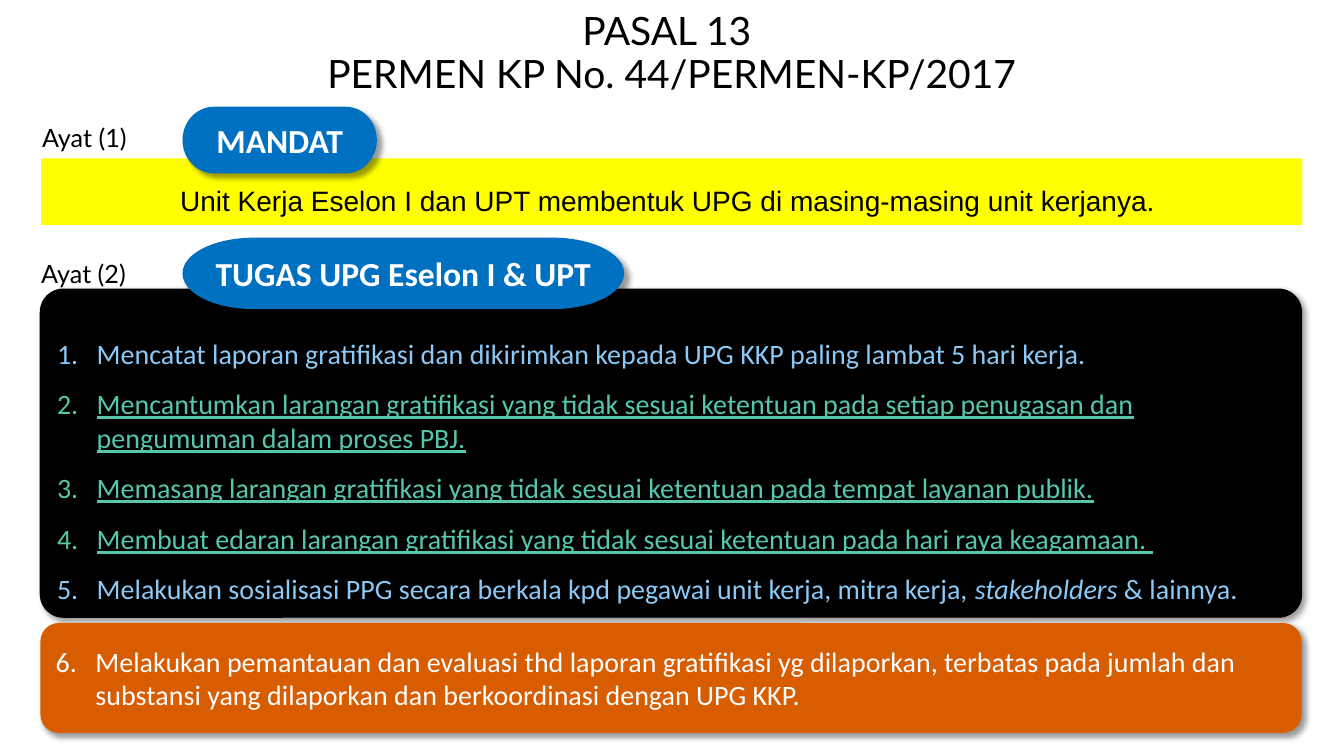
from dataclasses import dataclass
from lxml.etree import SubElement
from pptx import Presentation
from pptx.dml.color import RGBColor
from pptx.enum.shapes import MSO_SHAPE
from pptx.enum.text import MSO_ANCHOR, MSO_AUTO_SIZE, PP_ALIGN
from pptx.oxml.ns import qn
from pptx.util import Cm, Pt


@dataclass(frozen=True)
class Theme:
    black: str = "000000"
    white: str = "FFFFFF"
    yellow: str = "FFFF00"
    blue: str = "0070C0"
    orange: str = "D85C00"
    sky: str = "8CC9F7"
    mint: str = "56C7AA"
    title_size: float = 27.9
    badge_size: int = 24
    body_size: int = 20
    label_size: int = 18


theme = Theme()


def add_panel(kind, left, top, width, height, fill, shadow_distance=0):
    shape = slide.shapes.add_shape(kind, Cm(left), Cm(top), Cm(width), Cm(height))
    shape.shadow.inherit = False
    shape.fill.solid()
    shape.fill.fore_color.rgb = RGBColor.from_string(fill)
    shape.line.fill.background()
    shape.text_frame.word_wrap = True
    shape.text_frame.vertical_anchor = MSO_ANCHOR.MIDDLE
    if shadow_distance:
        effects = shape._element.spPr.find(qn("a:effectLst"))
        shadow = SubElement(effects, qn("a:outerShdw"), blurRad=str(Pt(4)),
                            dist=str(Pt(shadow_distance)), dir="2700000",
                            algn="tl", rotWithShape="0")
        shadow_color = SubElement(shadow, qn("a:srgbClr"), val=theme.black)
        SubElement(shadow_color, qn("a:alpha"), val="40000")
    return shape


def style_runs(paragraph, font_name, size, color, alignment=PP_ALIGN.LEFT, bold=False):
    paragraph.alignment = alignment
    for run in paragraph.runs:
        run.font.name = font_name
        run.font.size = Pt(size)
        run.font.bold = bold
        run.font.color.rgb = RGBColor.from_string(color)


presentation = Presentation()
presentation.slide_width = Cm(33.87)
presentation.slide_height = Cm(19.05)
slide = presentation.slides.add_slide(presentation.slide_layouts[5])

title = slide.shapes.title
title.left, title.top, title.width, title.height = Cm(5.13), Cm(0.53), Cm(23.6), Cm(1.68)
title.text_frame.text = "PASAL 13 \vPERMEN KP No. 44/PERMEN-KP/2017"
title.text_frame.auto_size = MSO_AUTO_SIZE.NONE
title.text_frame.vertical_anchor = MSO_ANCHOR.MIDDLE
title.text_frame.paragraphs[0].line_spacing = 0.9
style_runs(title.text_frame.paragraphs[0], "Lato", theme.title_size, theme.black, PP_ALIGN.CENTER)

mandate = add_panel(MSO_SHAPE.RECTANGLE, 1.04, 3.99, 31.78, 1.68, theme.yellow)
mandate.text_frame.text = "Unit Kerja Eselon I dan UPT membentuk UPG di masing-masing unit kerjanya. "
mandate_paragraph = mandate.text_frame.paragraphs[0]
mandate_paragraph.line_spacing = 1.5
mandate_paragraph.space_after = Pt(6)
style_runs(mandate_paragraph, "Arial", theme.body_size, theme.black, PP_ALIGN.CENTER)

duties = add_panel(MSO_SHAPE.ROUNDED_RECTANGLE, 1.02, 7.29, 31.78, 8.26, theme.black, 3)
duties.adjustments[0] = 0.07
duties.line.color.rgb = RGBColor.from_string(theme.black)
duties.line.width = Pt(1)
duties.text_frame.vertical_anchor = MSO_ANCHOR.BOTTOM

evaluation = add_panel(MSO_SHAPE.ROUNDED_RECTANGLE, 1.02, 15.7, 31.78, 2.77, theme.orange, 3)

numbered_lists = [
    (duties, 1, [
        (["Mencatat laporan gratifikasi dan dikirimkan kepada UPG KKP paling lambat 5 hari kerja."], theme.sky),
        (["Mencantumkan larangan gratifikasi yang tidak sesuai ketentuan pada setiap penugasan dan "
          "pengumuman dalam proses PBJ."], theme.mint),
        (["Memasang larangan gratifikasi yang tidak sesuai ketentuan pada tempat layanan publik."], theme.mint),
        (["Membuat edaran larangan gratifikasi yang tidak sesuai ketentuan pada hari raya keagamaan. "], theme.mint),
        (["Melakukan sosialisasi PPG secara berkala kpd pegawai unit kerja, mitra kerja, ",
          "stakeholders", " & lainnya."], theme.sky),
    ]),
    (evaluation, 6, [
        (["Melakukan pemantauan dan evaluasi thd laporan gratifikasi yg dilaporkan, terbatas pada jumlah dan "
          "substansi yang dilaporkan dan berkoordinasi dengan UPG KKP."], theme.white),
    ]),
]
for panel, start, items in numbered_lists:
    for index, (parts, color) in enumerate(items):
        frame = panel.text_frame
        paragraph = frame.add_paragraph() if index else frame.paragraphs[0]
        for part in parts:
            run = paragraph.add_run()
            run.text = part
            run.font.italic = part == "stakeholders"
            run.font.underline = color == theme.mint
        paragraph.space_after = Pt(12)
        style_runs(paragraph, "Calibri", theme.body_size, color)
        properties = paragraph._p.get_or_add_pPr()
        properties.set("marL", str(Cm(1)))
        properties.set("indent", str(-Cm(1)))
        SubElement(properties, qn("a:buFont"), typeface="+mj-lt")
        SubElement(properties, qn("a:buAutoNum"), type="arabicPeriod", startAt=str(start))

badges = [
    ("TUGAS UPG Eselon I & UPT", 5.99, 11.13, 1.8),
    ("MANDAT", 2.69, 4.9, 1.68),
]
for text, top, width, height in badges:
    badge = add_panel(MSO_SHAPE.FLOWCHART_TERMINATOR, 4.6, top, width, height, theme.blue, 5)
    badge.text_frame.text = text
    badge.text_frame.word_wrap = False
    style_runs(badge.text_frame.paragraphs[0], "Calibri", theme.badge_size, theme.white,
               PP_ALIGN.CENTER, bold=True)

for text, left, top in [("Ayat (1)", 0.81, 2.97), ("Ayat (2)", 0.79, 6.38)]:
    label = slide.shapes.add_textbox(Cm(left), Cm(top), Cm(3), Cm(1.02))
    label.text_frame.text = text
    label.text_frame.word_wrap = True
    style_runs(label.text_frame.paragraphs[0], "Lato", theme.label_size, theme.black)

presentation.save("out.pptx")
